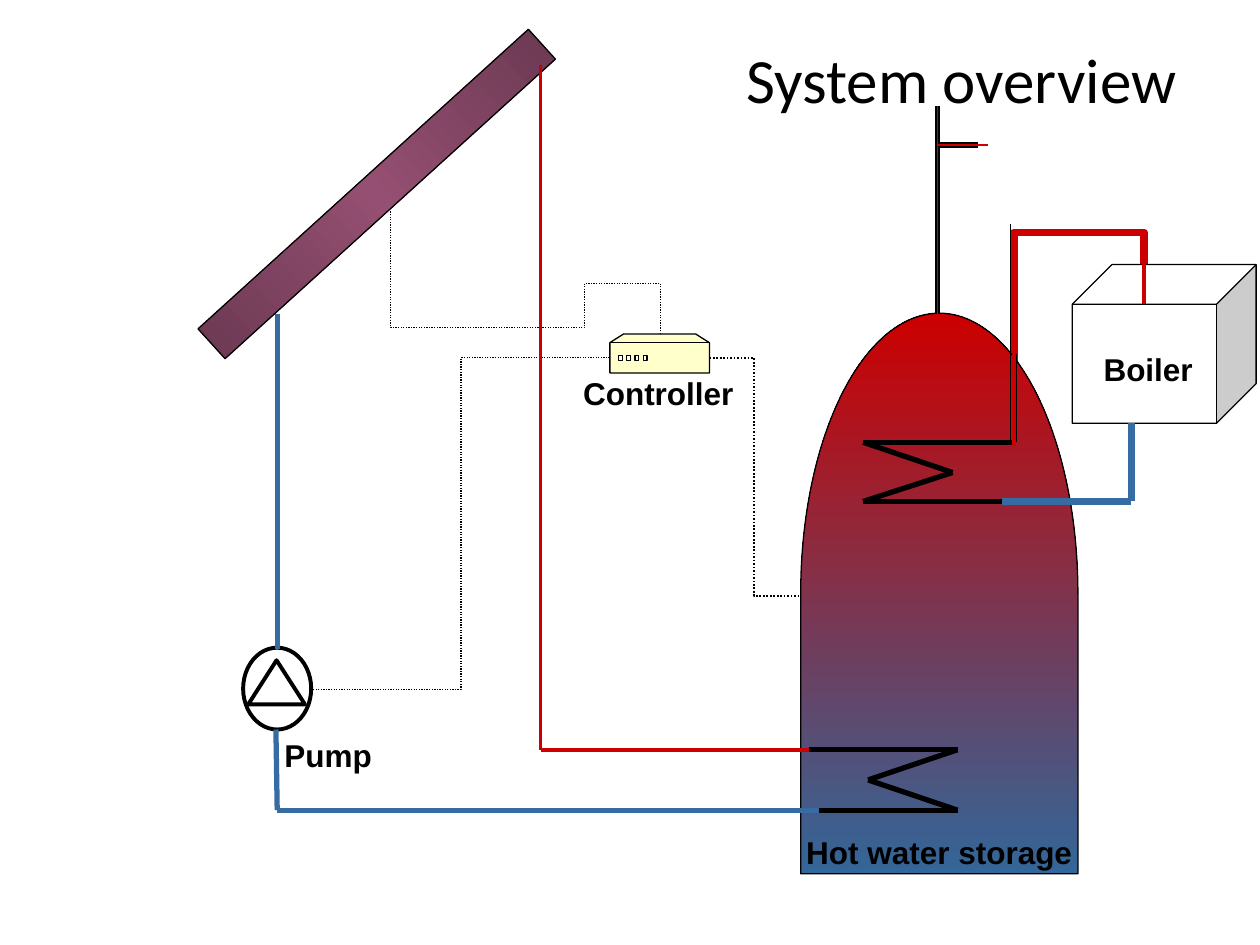
from copy import deepcopy

from lxml.etree import SubElement
from pptx import Presentation
from pptx.dml.color import RGBColor
from pptx.enum.dml import MSO_LINE
from pptx.enum.shapes import MSO_CONNECTOR, MSO_SHAPE
from pptx.enum.text import MSO_ANCHOR, PP_ALIGN
from pptx.oxml.ns import qn
from pptx.util import Inches, Pt

THEME = {
    "ink": RGBColor.from_string("000000"),
    "white": RGBColor.from_string("FFFFFF"),
    "hot": RGBColor.from_string("CC0000"),
    "cold": RGBColor.from_string("366CA2"),
    "cool": RGBColor.from_string("336699"),
    "cream": RGBColor.from_string("FFFFCC"),
    "plum": RGBColor.from_string("6B3952"),
    "glow": RGBColor.from_string("954F72"),
    "title": Pt(36),
    "label": Pt(18),
}

deck = Presentation()
deck.slide_width, deck.slide_height = Inches(10), Inches(7.5)
slide = deck.slides.add_slide(deck.slide_layouts[5])
shapes = slide.shapes


def line(start, end, color, width, turn=0, adj=()):
    """Straight line, or a bent one when adj holds its bend positions."""
    kind = MSO_CONNECTOR.ELBOW if adj else MSO_CONNECTOR.STRAIGHT
    link = shapes.add_connector(kind, *[Inches(v) for v in (*start, *end)])
    link.line.color.rgb = THEME[color]
    link.line.width = Pt(width)
    props = link._element.spPr
    SubElement(props, qn("a:effectLst"))
    if turn:
        props.find(qn("a:xfrm")).set("rot", str(turn * 60000))
    if adj:
        geom = props.find(qn("a:prstGeom"))
        geom.set("prst", f"bentConnector{len(adj) + 2}")
        guides = geom.find(qn("a:avLst"))
        if guides is None:
            guides = SubElement(geom, qn("a:avLst"))
        for n, part in enumerate(adj, 1):
            SubElement(guides, qn("a:gd"), name=f"adj{n}", fmla=f"val {round(part * 100000)}")
    return link


def paint(shape, fills, width=0.75):
    """Solid fill for one colour, even gradient for several."""
    shape.shadow.inherit = False
    shape.line.color.rgb = THEME["ink"]
    shape.line.width = Pt(width)
    if len(fills) == 1:
        shape.fill.solid()
        shape.fill.fore_color.rgb = THEME[fills[0]]
        return
    shape.fill.gradient()
    shape.fill.gradient_angle = 0 if len(fills) == 2 else 270
    stops = shape._element.spPr.find(qn("a:gradFill")).find(qn("a:gsLst"))
    for _ in fills[2:]:
        stops.append(deepcopy(stops[-1]))
    for n, (stop, name) in enumerate(zip(shape.fill.gradient_stops, fills)):
        stop.color.rgb = THEME[name]
        stop.position = n / (len(fills) - 1)


# Title
title = shapes.title
title.left, title.top, title.width, title.height = [Inches(v) for v in (4.43, 0.27, 5.12, 0.71)]
title.text_frame.text = "System overview "
title.text_frame.vertical_anchor = MSO_ANCHOR.TOP
head = title.text_frame.paragraphs[0]
head.alignment = PP_ALIGN.RIGHT
font = head.runs[0].font
font.name, font.size, font.color.rgb = "Calibri", THEME["title"], THEME["ink"]

# Tank, with the boiler feed passing behind it
feed = ((9.13, 3.49), (8, 2.46))
line(*feed, "hot", 4.5, 270, [-0.5])
tank = shapes.add_shape(MSO_SHAPE.FLOWCHART_DELAY, Inches(5.23), Inches(3.61), Inches(4.45), Inches(2.2))
tank.rotation = 270
paint(tank, ["cool", "hot"])

# Boiler
boiler = shapes.add_shape(MSO_SHAPE.CUBE, Inches(8.51), Inches(2.1), Inches(1.46), Inches(1.26))
paint(boiler, ["white"])
line(*feed, "hot", 2.25, 270, [-0.5])

# Heat exchanger coils
coils = [
    [(8.03, 3.51), (6.85, 3.51), (7.56, 3.75), (6.85, 3.98), (8.03, 3.98)],
    [(6.42, 5.95), (7.6, 5.95), (6.89, 6.19), (7.6, 6.43), (6.42, 6.43)],
]
for coil in coils:
    for start, end in zip(coil, coil[1:]):
        line(start, end, "ink", 3)

# Solar collector
panel = shapes.add_shape(MSO_SHAPE.RECTANGLE, Inches(2.83), Inches(-0.23), Inches(0.32), Inches(3.54))
panel.rotation = 47.8
paint(panel, ["plum", "glow", "plum"])

# Water outlet
for color, width, tip in [("ink", 3, 7.76), ("hot", 0.75, 7.84)]:
    line((7.44, 2.49), (7.44, 0.84), color, width)
    line((7.44, 1.15), (tip, 1.15), color, width)

# Controller: case, lid edge and four lamps
case = [(4.84, 2.72), (4.95, 2.65), (5.52, 2.65), (5.63, 2.72), (5.63, 2.96), (4.84, 2.96)]
paths = [(case, True), ([(4.84, 2.72), (5.63, 2.72)], False)]
for n in range(4):
    x = 4.91 + n * 0.065
    paths.append(([(x, 2.82), (x, 2.86), (x + 0.03, 2.86), (x + 0.03, 2.82)], True))
pen = shapes.build_freeform(Inches(4.84), Inches(2.72))
for path, shut in paths:
    dots = [(Inches(x), Inches(y)) for x, y in path]
    pen.move_to(*dots[0])
    pen.add_line_segments(dots[1:], close=shut)
paint(pen.convert_to_shape(), ["cream"])

# Sensor wires to tank, collector and pump
wires = [
    ((5.63, 2.84), (6.34, 4.73), 1, 0, [0.5]),
    ((4.66, 1.09), (3.68, 3.23), 0.75, 90, [0.41, 0.28, 0.05]),
    ((4.84, 2.84), (2.48, 5.47), 0.75, 0, [0.5]),
]
for start, end, width, turn, adj in wires:
    wire = line(start, end, "ink", width, turn, adj)
    wire.line.dash_style = MSO_LINE.ROUND_DOT

# Pump
for kind, box in [
    (MSO_SHAPE.OVAL, (1.93, 5.14, 0.54, 0.65)),
    (MSO_SHAPE.ISOSCELES_TRIANGLE, (1.97, 5.24, 0.45, 0.35)),
]:
    paint(shapes.add_shape(kind, *[Inches(v) for v in box]), ["white"], 2.25)

# Pipes
pipes = [
    ("hot", 2.25, [(6.42, 5.95), (4.29, 5.95), (4.29, 0.52)]),
    ("cold", 3, [(2.2, 2.49), (2.2, 5.15)]),
    ("cold", 3, [(2.19, 5.79), (2.2, 6.43), (6.5, 6.43)]),
    ("cold", 4.5, [(7.95, 3.98), (8.98, 3.98), (8.98, 3.36)]),
    ("ink", 0.75, [(8.02, 1.78), (8.02, 3.51)]),
    ("ink", 0.75, [(8.07, 2.81), (8.07, 3.51)]),
]
for color, width, route in pipes:
    for start, end in zip(route, route[1:]):
        line(start, end, color, width)

# Labels
labels = [
    ("Hot water storage", 6.3, 6.56, 2.31),
    ("Boiler", 8.66, 2.73, 0.91),
    ("Controller", 4.53, 2.92, 1.4),
    ("Pump", 2.16, 5.79, 0.9),
]
for text, x, y, wide in labels:
    frame = shapes.add_textbox(Inches(x), Inches(y), Inches(wide), Inches(0.4)).text_frame
    frame.word_wrap = False
    frame.text = text
    font = frame.paragraphs[0].runs[0].font
    font.name, font.size, font.bold = "Arial", THEME["label"], True
    font.color.rgb = THEME["ink"]

deck.save("out.pptx")
